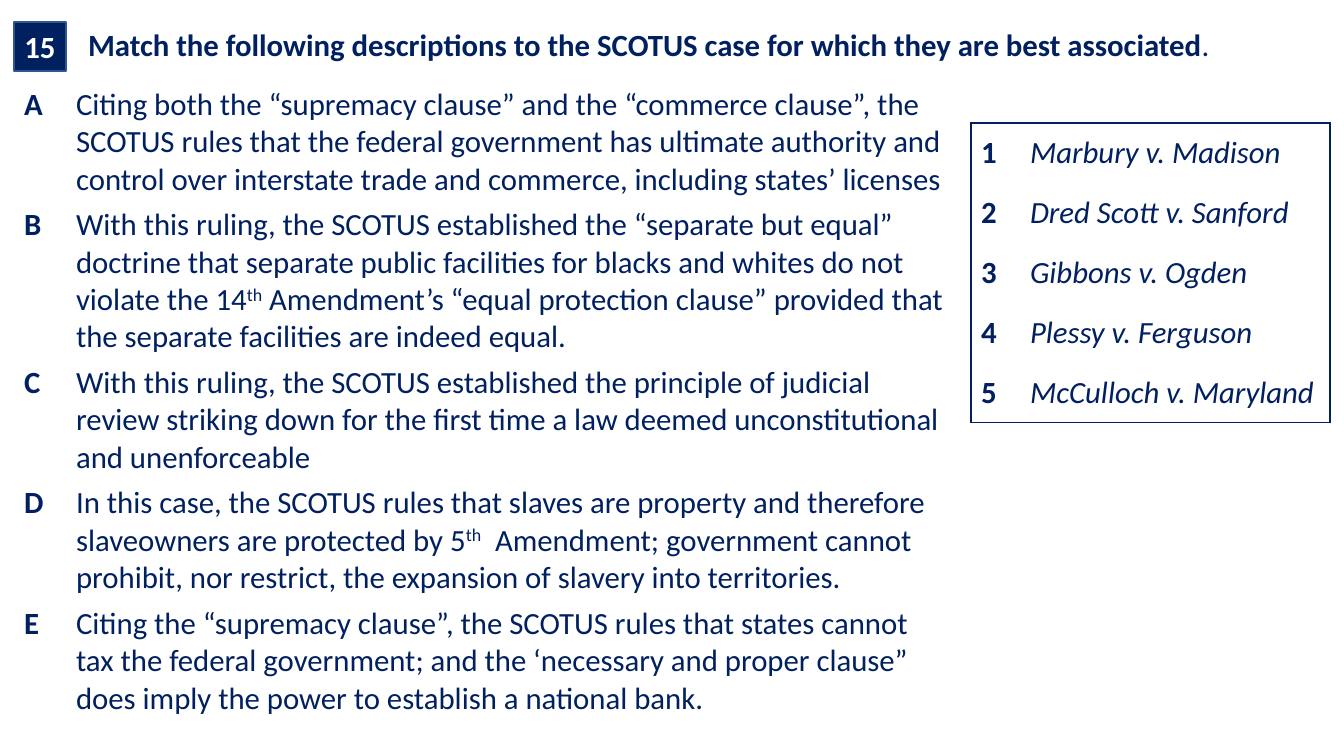
from lxml.etree import Element, SubElement
from pptx import Presentation
from pptx.dml.color import RGBColor
from pptx.enum.shapes import MSO_SHAPE
from pptx.enum.text import MSO_ANCHOR, PP_ALIGN
from pptx.oxml.ns import qn
from pptx.util import Pt

PX = 9071.43  # EMU in one px
COLORS = {"navy": "002060", "white": "FFFFFF", "badge line": "325491"}
NO_STYLE = "{2D5ABB26-0587-4C30-8999-92F81FD0307C}"

TITLE = "Match the following descriptions to the SCOTUS case for which they are best associated"
CASES = [
    "Marbury v. Madison",
    "Dred Scott v. Sanford",
    "Gibbons v. Ogden",
    "Plessy v. Ferguson",
    "McCulloch v. Maryland",
]
# Every second part of a description is superscript.
DESCRIPTIONS = [
    ["Citing both the “supremacy clause” and the “commerce clause”, the SCOTUS rules that "
     "the federal government has ultimate authority and control over interstate trade and "
     "commerce, including states’ licenses"],
    ["With this ruling, the SCOTUS established the “separate but equal” doctrine that separate "
     "public facilities for blacks and whites do not violate the 14", "th",
     " Amendment’s “equal protection clause” provided that the separate facilities are "
     "indeed equal."],
    ["With this ruling, the SCOTUS established the principle of judicial review striking down "
     "for the first time a law deemed unconstitutional and unenforceable"],
    ["In this case, the SCOTUS rules that slaves are property and therefore slaveowners are "
     "protected by 5", "th",
     "  Amendment; government cannot prohibit, nor restrict, the expansion of slavery into "
     "territories."],
    ["Citing the “supremacy clause”, the SCOTUS rules that states cannot tax the federal "
     "government; and the ‘necessary and proper clause” does imply the power to establish "
     "a national bank."],
]


def px(length):
    return round(length * PX)


def write(frame, parts, color="navy", bold=False, italic=False):
    """Fill the first paragraph with parts, raising every second one."""
    paragraph = frame.paragraphs[0]
    font = paragraph.font
    font.name, font.size, font.bold, font.italic = "Calibri", Pt(22), bold, italic
    font.color.rgb = RGBColor.from_string(COLORS[color])
    for index, part in enumerate(parts):
        run = paragraph.add_run()
        run.text = part
        if index % 2:
            run._r.get_or_add_rPr().set("baseline", "30000")
    return paragraph


prs = Presentation()
prs.slide_width, prs.slide_height = px(1344), px(756)
slide = prs.slides.add_slide(prs.slide_layouts[6])

# Tables: left, top, column widths, row height, row count, vertical margin, anchor
LAYOUT = {
    "title": (78, 22, [1197], 41, 1, 5, MSO_ANCHOR.MIDDLE),
    "cases": (971, 123, [49, 310], 60, 5, 5, MSO_ANCHOR.MIDDLE),
    "descriptions": (14, 82, [52, 896], 105, 5, 4, MSO_ANCHOR.TOP),
}
tables = {}
for key, (left, top, widths, height, count, margin, anchor) in LAYOUT.items():
    table = slide.shapes.add_table(count, len(widths), px(left), px(top),
                                   px(sum(widths)), px(height * count)).table
    table.first_row = table.horz_banding = False
    table._tbl.tblPr.find(qn("a:tableStyleId")).text = NO_STYLE
    for column, width in zip(table.columns, widths):
        column.width = px(width)
    for row in table.rows:
        row.height = px(height)
    for cell in table.iter_cells():
        cell.fill.background()
        cell.margin_top = cell.margin_bottom = px(margin)
        cell.vertical_anchor = anchor
    tables[key] = table

heading = tables["title"].cell(0, 0)
heading.fill.solid()
heading.fill.fore_color.rgb = RGBColor.from_string(COLORS["white"])
period = write(heading.text_frame, [TITLE], bold=True).add_run()
period.text = "."
period.font.bold = False

for row, (case, description) in enumerate(zip(CASES, DESCRIPTIONS)):
    for key, label, parts in (("cases", str(row + 1), [case]),
                              ("descriptions", "ABCDE"[row], description)):
        write(tables[key].cell(row, 0).text_frame, [label], bold=True)
        write(tables[key].cell(row, 1).text_frame, parts, italic=key == "cases")

    # Outline around the whole list of cases
    for column in range(2):
        edges = ["lnL" if column == 0 else "lnR"]
        if row == 0:
            edges.append("lnT")
        if row == len(CASES) - 1:
            edges.append("lnB")
        properties = tables["cases"].cell(row, column)._tc.get_or_add_tcPr()
        for position, edge in enumerate(edges):
            line = Element(qn(f"a:{edge}"), w=str(Pt(1)))
            fill = SubElement(line, qn("a:solidFill"))
            SubElement(fill, qn("a:srgbClr"), val=COLORS["navy"])
            properties.insert(position, line)

badge = slide.shapes.add_shape(MSO_SHAPE.RECTANGLE, px(14), px(22), px(52), px(49))
badge.shadow.inherit = False
badge.fill.solid()
badge.fill.fore_color.rgb = RGBColor.from_string(COLORS["navy"])
badge.line.color.rgb = RGBColor.from_string(COLORS["badge line"])
badge.line.width = Pt(1)
badge.text_frame.vertical_anchor = MSO_ANCHOR.MIDDLE
write(badge.text_frame, ["15"], color="white", bold=True).alignment = PP_ALIGN.CENTER

prs.save("out.pptx")
